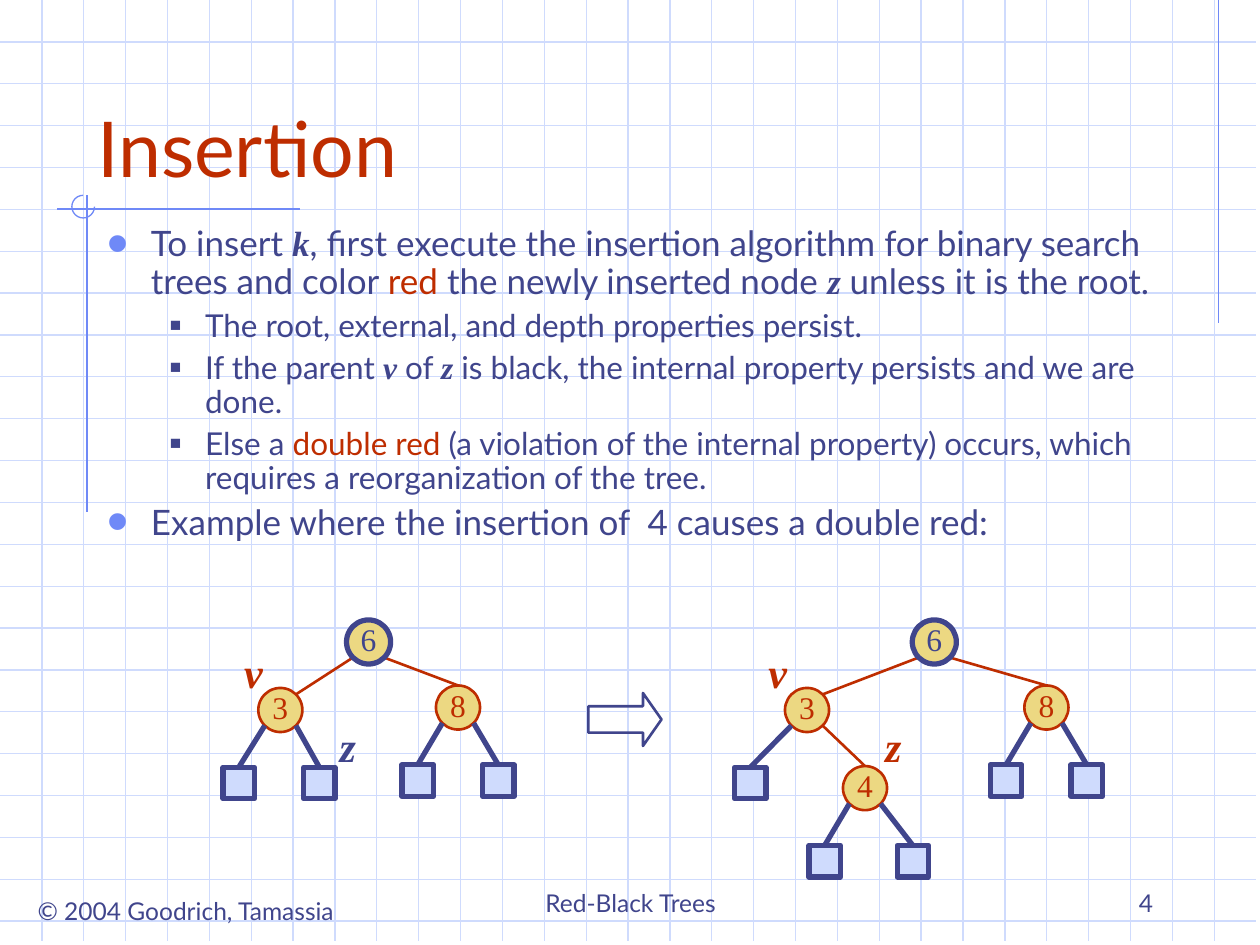
"""Build the slide on insertion into red-black trees."""
from dataclasses import dataclass
from math import cos, radians, sin

from lxml.etree import SubElement
from pptx import Presentation
from pptx.dml.color import RGBColor
from pptx.enum.shapes import MSO_CONNECTOR, MSO_SHAPE
from pptx.enum.text import MSO_ANCHOR, MSO_AUTO_SIZE, PP_ALIGN
from pptx.oxml.ns import qn
from pptx.shapes.autoshape import Shape
from pptx.shapes.connector import Connector
from pptx.slide import Slide
from pptx.text.text import TextFrame, _Paragraph
from pptx.util import Inches, Pt

INK = RGBColor(0x40, 0x45, 0x8C)
RED = RGBColor(0xBE, 0x2D, 0x00)
ACCENT = RGBColor(0x6F, 0x89, 0xF7)
PALE = RGBColor(0xCF, 0xDB, 0xFD)
GOLD = RGBColor(0xEC, 0xD8, 0x82)
SANS = "Lato"
SERIF = "Times New Roman"
GRID_STEP = 0.3323
NODE_SIZE = 0.35
LEAF_SIZE = 0.25
RIGHT, LOWER_RIGHT, LOWER_LEFT, TOP, UPPER_RIGHT = 0, 45, 135, 270, 315


@dataclass(frozen=True)
class Node:
    label: str
    left: float
    top: float
    color: RGBColor = RED
    line_width: float = 1.5

    def rim(self, angle: float) -> tuple[float, float]:
        """Return the point on the circle at a clockwise angle from the right."""
        radius = NODE_SIZE / 2
        return (self.left + radius + radius * cos(radians(angle)),
                self.top + radius + radius * sin(radians(angle)))


@dataclass(frozen=True)
class Edge:
    parent: Node
    parent_angle: float
    child: Node
    child_angle: float


@dataclass(frozen=True)
class Leaf:
    parent: Node
    parent_angle: float
    left: float
    top: float


@dataclass(frozen=True)
class Bullet:
    level: int
    runs: tuple[tuple[str, str], ...]


@dataclass(frozen=True)
class BulletStyle:
    size: float
    space_before: float
    margin: float
    hanging: float
    symbol: str
    symbol_color: RGBColor
    symbol_percent: int


BULLET_STYLES = (
    BulletStyle(20, 5, 0.35, 0.35, "•", ACCENT, 176),
    BulletStyle(18, 4.5, 0.78, 0.28, "■", INK, 60),
)
BULLETS = (
    Bullet(0, (("To insert ", "plain"), ("k", "variable"),
               (", first execute the insertion algorithm for binary search trees and color ", "plain"),
               ("red", "red"), (" the newly inserted node ", "plain"), ("z ", "variable"),
               ("unless it is the root.", "plain"))),
    Bullet(1, (("The root, external, and depth properties persist.", "plain"),)),
    Bullet(1, (("If the parent ", "plain"), ("v", "variable"), (" of ", "plain"), ("z", "variable"),
               (" is black, the internal property persists and we are done.", "plain"))),
    Bullet(1, (("Else a ", "plain"), ("double red", "red"),
               (" (a violation of the internal property) occurs, which requires a reorganization of the tree.",
                "plain"))),
    Bullet(0, (("Example where the insertion of  4 causes a double red:", "plain"),)),
)


def add_run(paragraph: _Paragraph, text: str, size: float, color: RGBColor = INK,
            font_name: str = SANS, emphasis: bool = False) -> None:
    """Add one formatted run."""
    run = paragraph.add_run()
    run.text = text
    run.font.size = Pt(size)
    run.font.name = font_name
    run.font.color.rgb = color
    run.font.bold = run.font.italic = emphasis


def add_line(slide: Slide, start: tuple[float, float], end: tuple[float, float],
             color: RGBColor, width: float = 0.75) -> Connector:
    """Draw a straight connector without a shadow."""
    points = [Inches(value) for value in (*start, *end)]
    connector = slide.shapes.add_connector(MSO_CONNECTOR.STRAIGHT, *points)
    connector.line.color.rgb = color
    connector.line.width = Pt(width)
    SubElement(connector._element.spPr, qn("a:effectLst"))
    return connector


def add_outline(slide: Slide, preset: MSO_SHAPE, box: tuple[float, float, float, float],
                color: RGBColor, width: float, fill: RGBColor | None = None) -> Shape:
    """Draw a preset shape with an outline and an optional fill."""
    shape = slide.shapes.add_shape(preset, *map(Inches, box))
    shape.shadow.inherit = False
    shape.line.color.rgb = color
    shape.line.width = Pt(width)
    if fill is None:
        shape.fill.background()
    else:
        shape.fill.solid()
        shape.fill.fore_color.rgb = fill
    return shape


def add_text_box(slide: Slide, box: tuple[float, float, float, float], wrap: bool = True) -> TextFrame:
    """Add an empty text box and return its frame."""
    frame = slide.shapes.add_textbox(*map(Inches, box)).text_frame
    frame.word_wrap = wrap
    return frame


def add_background(slide: Slide) -> None:
    """Draw the grid and the accent lines."""
    for row in range(1, 23):
        add_line(slide, (0, row * GRID_STEP), (9.97, row * GRID_STEP), PALE)
    for column in range(1, 30):
        add_line(slide, (column * GRID_STEP, 0), (column * GRID_STEP, 7.47), PALE)
    add_line(slide, (9.67, 0), (9.67, 2.56), ACCENT)
    add_line(slide, (2.38, 1.66), (0.45, 1.66), ACCENT)
    add_line(slide, (0.69, 1.55), (0.69, 4.06), ACCENT)
    arc = add_outline(slide, MSO_SHAPE.ARC, (0.57, 1.55, 0.18, 0.18), ACCENT, 0.75)
    arc.adjustments[0] = RIGHT
    arc.adjustments[1] = TOP * 0.6


def add_title(slide: Slide) -> None:
    """Place the title above the background."""
    title = slide.shapes.title
    slide.shapes._spTree.append(title._element)
    title.left, title.top, title.width, title.height = map(Inches, (0.67, 0.33, 8.5, 1.25))
    frame = title.text_frame
    frame.auto_size = MSO_AUTO_SIZE.NONE
    frame.vertical_anchor = MSO_ANCHOR.BOTTOM
    frame.paragraphs[0].alignment = PP_ALIGN.LEFT
    add_run(frame.paragraphs[0], "Insertion", 44, RED)


def add_footer(slide: Slide, text: str, box: tuple[float, float, float, float],
               alignment: PP_ALIGN, anchor: MSO_ANCHOR, wrap: bool = True) -> None:
    """Add one footer text."""
    frame = add_text_box(slide, box, wrap)
    frame.vertical_anchor = anchor
    frame.paragraphs[0].alignment = alignment
    add_run(frame.paragraphs[0], text, 14)


def set_bullet(paragraph: _Paragraph, style: BulletStyle) -> None:
    """Give a paragraph its bullet and hanging indent."""
    properties = paragraph._p.get_or_add_pPr()
    properties.set("marL", str(Inches(style.margin)))
    properties.set("indent", str(-Inches(style.hanging)))
    color = SubElement(properties, qn("a:buClr"))
    SubElement(color, qn("a:srgbClr"), val=str(style.symbol_color))
    SubElement(properties, qn("a:buSzPct"), val=str(style.symbol_percent * 1000))
    SubElement(properties, qn("a:buFont"), typeface="Arial")
    SubElement(properties, qn("a:buChar"), char=style.symbol)


def add_bullets(slide: Slide) -> None:
    """Add the bulleted explanation."""
    frame = add_text_box(slide, (0.75, 1.75, 8.83, 3.08))
    for index, bullet in enumerate(BULLETS):
        style = BULLET_STYLES[bullet.level]
        paragraph = frame.add_paragraph() if index else frame.paragraphs[0]
        set_bullet(paragraph, style)
        paragraph.level = bullet.level
        paragraph.line_spacing = 0.9
        paragraph.space_before = Pt(style.space_before if index else 0)
        for text, kind in bullet.runs:
            variable = kind == "variable"
            add_run(paragraph, text, style.size, RED if kind == "red" else INK,
                    SERIF if variable else SANS, variable)


def add_node(slide: Slide, node: Node) -> None:
    """Draw a labelled internal node."""
    box = (node.left, node.top, NODE_SIZE, NODE_SIZE)
    frame = add_outline(slide, MSO_SHAPE.OVAL, box, node.color, node.line_width, GOLD).text_frame
    frame.word_wrap = False
    frame.vertical_anchor = MSO_ANCHOR.MIDDLE
    frame.margin_left = frame.margin_right = frame.margin_top = 0
    frame.margin_bottom = Inches(0.05)
    frame.paragraphs[0].alignment = PP_ALIGN.CENTER
    add_run(frame.paragraphs[0], node.label, 18, node.color, SERIF)


def add_leaf(slide: Slide, leaf: Leaf) -> None:
    """Draw an external node joined to its parent."""
    square = add_outline(slide, MSO_SHAPE.RECTANGLE, (leaf.left, leaf.top, LEAF_SIZE, LEAF_SIZE), INK, 3, PALE)
    top_middle = (leaf.left + LEAF_SIZE / 2, leaf.top)
    connector = add_line(slide, top_middle, leaf.parent.rim(leaf.parent_angle), INK, 3)
    connector.begin_connect(square, 0)


def add_tree(slide: Slide, edges: tuple[Edge, ...], leaves: tuple[Leaf, ...]) -> None:
    """Draw a tree from its edges and leaves."""
    for edge in edges:
        add_line(slide, edge.child.rim(edge.child_angle), edge.parent.rim(edge.parent_angle), RED, 1.5)
    for node in (edges[0].parent, *(edge.child for edge in edges)):
        add_node(slide, node)
    for leaf in leaves:
        add_leaf(slide, leaf)


def add_variable(slide: Slide, name: str, left: float, top: float, color: RGBColor) -> None:
    """Label a tree position with a variable."""
    paragraph = add_text_box(slide, (left, top, 0.34, 0.5)).paragraphs[0]
    paragraph.alignment = PP_ALIGN.CENTER
    add_run(paragraph, name, 24, color, SERIF, True)


def add_trees(slide: Slide) -> None:
    """Draw the trees before and after the insertion."""
    root, three, eight = Node("6", 2.75, 4.92, INK, 3), Node("3", 2.05, 5.46), Node("8", 3.46, 5.44)
    add_tree(slide,
             (Edge(root, LOWER_RIGHT, eight, TOP), Edge(root, LOWER_LEFT, three, UPPER_RIGHT)),
             (Leaf(three, LOWER_LEFT, 1.77, 6.09), Leaf(three, LOWER_RIGHT, 2.41, 6.09),
              Leaf(eight, LOWER_LEFT, 3.19, 6.07), Leaf(eight, LOWER_RIGHT, 3.83, 6.07)))
    root, three, eight = Node("6", 7.24, 4.92, INK, 3), Node("3", 6.23, 5.46), Node("8", 8.13, 5.44)
    four = Node("4", 6.69, 6.08)
    add_tree(slide,
             (Edge(root, LOWER_RIGHT, eight, TOP), Edge(root, LOWER_LEFT, three, UPPER_RIGHT),
              Edge(three, LOWER_RIGHT, four, TOP)),
             (Leaf(three, LOWER_LEFT, 5.83, 6.09),
              Leaf(eight, LOWER_LEFT, 7.86, 6.07), Leaf(eight, LOWER_RIGHT, 8.5, 6.07),
              Leaf(four, LOWER_LEFT, 6.42, 6.71), Leaf(four, LOWER_RIGHT, 7.12, 6.71)))
    add_variable(slide, "z", 2.59, 5.67, INK)
    add_variable(slide, "v", 1.84, 5.08, RED)
    add_variable(slide, "v", 6, 5.08, RED)
    add_variable(slide, "z", 6.92, 5.67, RED)
    arrow = add_outline(slide, MSO_SHAPE.RIGHT_ARROW, (4.67, 5.5, 0.58, 0.42), INK, 1.5)
    arrow.adjustments[1] = 0.35


def main() -> None:
    """Build and save the presentation."""
    presentation = Presentation()
    presentation.slide_width, presentation.slide_height = Inches(10), Inches(7.5)
    slide = presentation.slides.add_slide(presentation.slide_layouts[5])
    add_background(slide)
    add_footer(slide, "© 2004 Goodrich, Tamassia", (0.18, 7.06, 2.59, 0.34),
               PP_ALIGN.CENTER, MSO_ANCHOR.TOP, False)
    add_footer(slide, "Red-Black Trees", (3.42, 6.83, 3.17, 0.5), PP_ALIGN.CENTER, MSO_ANCHOR.BOTTOM)
    add_footer(slide, "4", (7.17, 6.83, 2.08, 0.5), PP_ALIGN.RIGHT, MSO_ANCHOR.BOTTOM)
    add_title(slide)
    add_bullets(slide)
    add_trees(slide)
    presentation.save("out.pptx")


if __name__ == "__main__":
    main()
